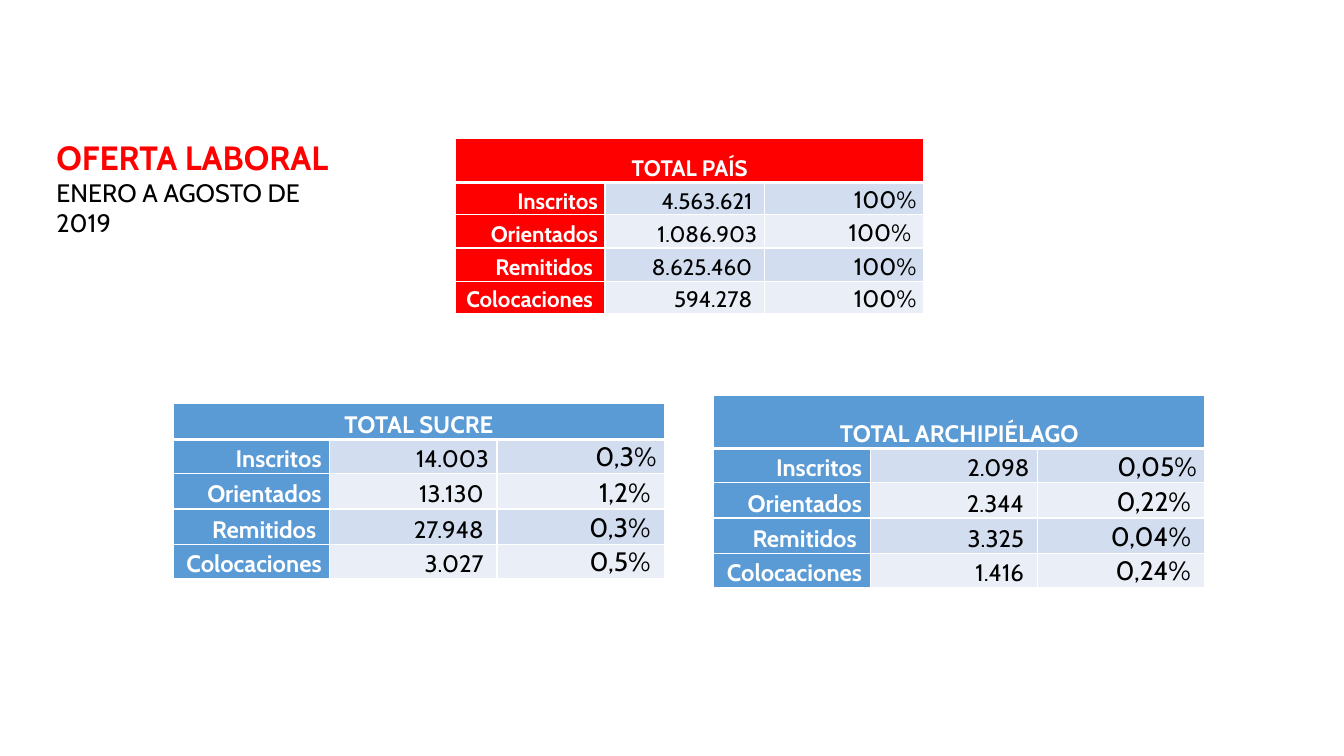
import pptx
import pptx.util
import pptx.dml.color
import pptx.enum.text
import pptx.oxml
import pptx.oxml.ns

Inches, Pt = pptx.util.Inches, pptx.util.Pt
RGBColor = pptx.dml.color.RGBColor
PP_ALIGN = pptx.enum.text.PP_ALIGN
MSO_ANCHOR = pptx.enum.text.MSO_ANCHOR

RED = RGBColor(0xFF, 0x00, 0x00)
BLUE = RGBColor(0x5B, 0x9B, 0xD5)
BAND_DARK = RGBColor(0xD2, 0xDE, 0xEF)
BAND_LIGHT = RGBColor(0xEA, 0xEF, 0xF7)
WHITE = RGBColor(0xFF, 0xFF, 0xFF)
BLACK = RGBColor(0x00, 0x00, 0x00)
FONT = "Cabin"

# A single trailing space sets a right-aligned entry off from the cell edge.
COUNTRY = [("Inscritos", "4.563.621 ", "100%"),
           ("Orientados", "1.086.903", "100% "),
           ("Remitidos ", "8.625.460 ", "100%"),
           ("Colocaciones ", "594.278 ", "100%")]
SUCRE = [("Inscritos", "14.003", "0,3%"),
         ("Orientados", "13.130 ", "1,2% "),
         ("Remitidos ", "27.948 ", "0,3% "),
         ("Colocaciones ", "3.027 ", "0,5% ")]
ARCHIPELAGO = [("Inscritos", "2.098", "0,05%"),
               ("Orientados", "2.344 ", "0,22% "),
               ("Remitidos ", "3.325 ", "0,04% "),
               ("Colocaciones ", "1.416 ", "0,24% ")]


def add_run(p, text, size, color, bold):
    r = p.add_run()
    r.text = text
    r.font.name = FONT
    r.font.size = Pt(size)
    r.font.bold = bold
    r.font.color.rgb = color


def set_borders(cell, top=1, bottom=1):
    """Draw white cell borders; widths are in points."""
    tc_pr = cell._tc.get_or_add_tcPr()
    sides = (("lnL", 1), ("lnR", 1), ("lnT", top), ("lnB", bottom))
    for i, (side, width) in enumerate(sides):
        tc_pr.insert(i, pptx.oxml.parse_xml(
            f'<a:{side} {pptx.oxml.ns.nsdecls("a")} w="{Pt(width)}">'
            f'<a:solidFill><a:srgbClr val="{WHITE}"/></a:solidFill></a:{side}>'))


def fill_cell(cell, text, size, color, bold, fill, align, inset):
    cell.fill.solid()
    cell.fill.fore_color.rgb = fill
    cell.vertical_anchor = MSO_ANCHOR.BOTTOM
    cell.margin_left = cell.margin_right = Inches(inset)
    cell.margin_top = cell.margin_bottom = 0
    p = cell.text_frame.paragraphs[0]
    p.alignment = align
    p.line_spacing = 1.06
    add_run(p, text, size, color, bold)


def add_heading(slide, left, top, width, height):
    sp = slide.shapes.title
    sp.left, sp.top, sp.width, sp.height = map(Inches, (left, top, width, height))
    tf = sp.text_frame
    tf.word_wrap = True
    tf.auto_size = pptx.enum.text.MSO_AUTO_SIZE.NONE
    tf.vertical_anchor = MSO_ANCHOR.TOP
    lines = (("OFERTA LABORAL", 24, RED, True),
             ("ENERO A AGOSTO DE 2019", 18, BLACK, False))
    for i, line in enumerate(lines):
        p = tf.add_paragraph() if i else tf.paragraphs[0]
        p.alignment = PP_ALIGN.LEFT
        add_run(p, *line)


def add_totals(slide, left, top, col_widths, row_heights, title, rows, accent,
               size, percent_size, inset):
    """Add a table with a merged heading over label, count and percentage columns."""
    table = slide.shapes.add_table(
        len(row_heights), len(col_widths), Inches(left), Inches(top),
        Inches(sum(col_widths)), Inches(sum(row_heights))).table
    for column, width in zip(table.columns, col_widths):
        column.width = Inches(width)
    for row, height in zip(table.rows, row_heights):
        row.height = Inches(height)

    header = table.cell(0, 0)
    header.merge(table.cell(0, len(col_widths) - 1))
    fill_cell(header, title, size, WHITE, True, accent, PP_ALIGN.CENTER, inset)
    for c in range(len(col_widths)):
        set_borders(table.cell(0, c), bottom=3)

    for i, values in enumerate(rows, start=1):
        band = BAND_DARK if i % 2 else BAND_LIGHT
        styles = ((size, WHITE, True, accent),
                  (size, BLACK, False, band),
                  (percent_size, BLACK, False, band))
        for c, (text, style) in enumerate(zip(values, styles)):
            cell = table.cell(i, c)
            fill_cell(cell, text, *style, PP_ALIGN.RIGHT, inset)
            set_borders(cell, top=3 if i == 1 else 1)


def main():
    prs = pptx.Presentation()
    prs.slide_width, prs.slide_height = Inches(13.33), Inches(7.5)
    slide = prs.slides.add_slide(prs.slide_layouts[5])
    add_heading(slide, 0.46, 1.31, 3.12, 0.81)

    region_cols = (1.55, 1.66, 1.66)
    region_rows = (0.34, 0.35, 0.35, 0.34)
    add_totals(slide, 7.08, 3.92, region_cols, (0.53, *region_rows),
               "TOTAL ARCHIPIÉLAGO", ARCHIPELAGO, BLUE, 17, 19, 0.08)
    add_totals(slide, 1.72, 4, region_cols, (0.36, *region_rows),
               "TOTAL SUCRE", SUCRE, BLUE, 17, 19, 0.08)
    add_totals(slide, 4.52, 1.37, (1.48, 1.58, 1.58), (0.44, 0.32, 0.33, 0.33, 0.32),
               "TOTAL PAÍS", COUNTRY, RED, 16, 17, 0.07)
    prs.save("out.pptx")


if __name__ == "__main__":
    main()
